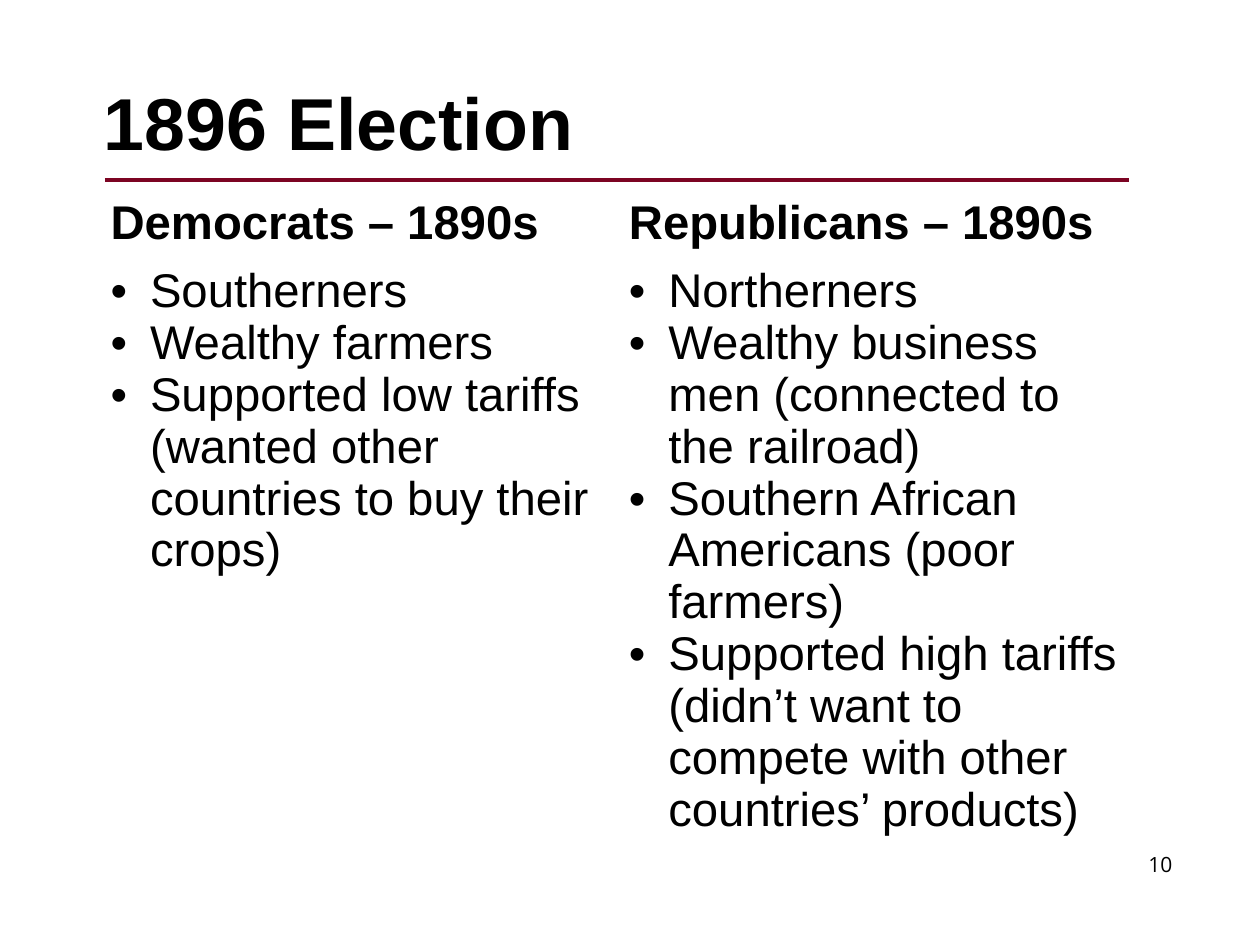
from lxml import etree
from pptx import Presentation
from pptx.dml.color import RGBColor
from pptx.enum import text
from pptx.oxml import ns
from pptx.util import Pt

BLACK = RGBColor(0x00, 0x00, 0x00)
WHITE = RGBColor(0xFF, 0xFF, 0xFF)
MAROON = RGBColor(0x7C, 0x04, 0x23)

TITLE = dict(name="Arial", size=Pt(42), bold=True)
HEAD = dict(name="Arial", size=Pt(27), bold=True)
BODY = dict(name="Arial", size=Pt(27), bold=False)
NUMBER = dict(name="Open Sans", size=Pt(12), bold=False)

PARTIES = {
    "Democrats – 1890s": [
        "Southerners",
        "Wealthy farmers",
        "Supported low tariffs (wanted other countries to buy their crops)",
    ],
    "Republicans – 1890s": [
        "Northerners",
        "Wealthy business men (connected to the railroad)",
        "Southern African Americans (poor farmers)",
        "Supported high tariffs (didn’t want to compete with other "
        "countries’ products)",
    ],
}


def style(font, form):
    for key, value in form.items():
        setattr(font, key, value)
    font.color.rgb = BLACK


def add_sub(parent, tag, **attrs):
    return etree.SubElement(parent, ns.qn(tag), attrs)


def add_bullet(para, indent=22.5):
    props = para._p.get_or_add_pPr()
    props.set("marL", str(Pt(indent)))
    props.set("indent", str(-Pt(indent)))
    add_sub(props, "a:buFont", typeface="Arial")
    add_sub(props, "a:buChar", char="•")


def set_borders(cell, top, bottom):
    """Draw white borders; they must precede the fill in the cell's XML."""
    props = cell._tc.get_or_add_tcPr()
    sides = {"a:lnL": 1, "a:lnR": 1, "a:lnT": top, "a:lnB": bottom}
    for tag, width in sides.items():
        line = add_sub(props, tag, w=str(Pt(width)))
        fill = add_sub(line, "a:solidFill")
        add_sub(fill, "a:srgbClr", val=str(WHITE))


def fill_cell(cell, lines, form, bullets, top, bottom):
    set_borders(cell, top, bottom)
    cell.fill.background()
    frame = cell.text_frame
    frame.text = "\n".join(lines)
    for para in frame.paragraphs:
        if bullets:
            para.line_spacing = 0.98
            add_bullet(para)
        style(para.font, form)


def add_title(slide, words):
    title = slide.shapes.title
    title.left, title.top = Pt(52), Pt(38)
    title.width, title.height = Pt(603), Pt(62)
    frame = title.text_frame
    frame.text = words
    frame.vertical_anchor = text.MSO_ANCHOR.MIDDLE
    para = frame.paragraphs[0]
    para.alignment = text.PP_ALIGN.LEFT
    style(para.font, TITLE)


def add_rule(slide):
    rule = slide.shapes.add_connector(1, Pt(60), Pt(103), Pt(645), Pt(103))
    rule.line.color.rgb = MAROON
    rule.line.width = Pt(2.25)
    add_sub(rule._element.spPr, "a:effectLst")


def add_number(slide, words):
    box = slide.shapes.add_textbox(Pt(611), Pt(483), Pt(66), Pt(21.6))
    frame = box.text_frame
    frame.word_wrap = True
    frame.text = words
    para = frame.paragraphs[0]
    para.alignment = text.PP_ALIGN.RIGHT
    style(para.font, NUMBER)


def add_parties(slide):
    heights = Pt(39.6), Pt(363.6)
    table = slide.shapes.add_table(
        2, len(PARTIES), Pt(56), Pt(108.7), Pt(592.4), sum(heights)
    ).table
    for row, height in zip(table.rows, heights):
        row.height = height
    for col, (party, points) in enumerate(PARTIES.items()):
        fill_cell(table.cell(0, col), [party], HEAD, False, 1, 3)
        fill_cell(table.cell(1, col), points, BODY, True, 3, 1)


def main():
    deck = Presentation()
    deck.slide_width, deck.slide_height = Pt(720), Pt(540)
    slide = deck.slides.add_slide(deck.slide_layouts[5])
    add_rule(slide)
    add_number(slide, "10")
    add_title(slide, "1896 Election")
    add_parties(slide)
    deck.save("out.pptx")


if __name__ == "__main__":
    main()
